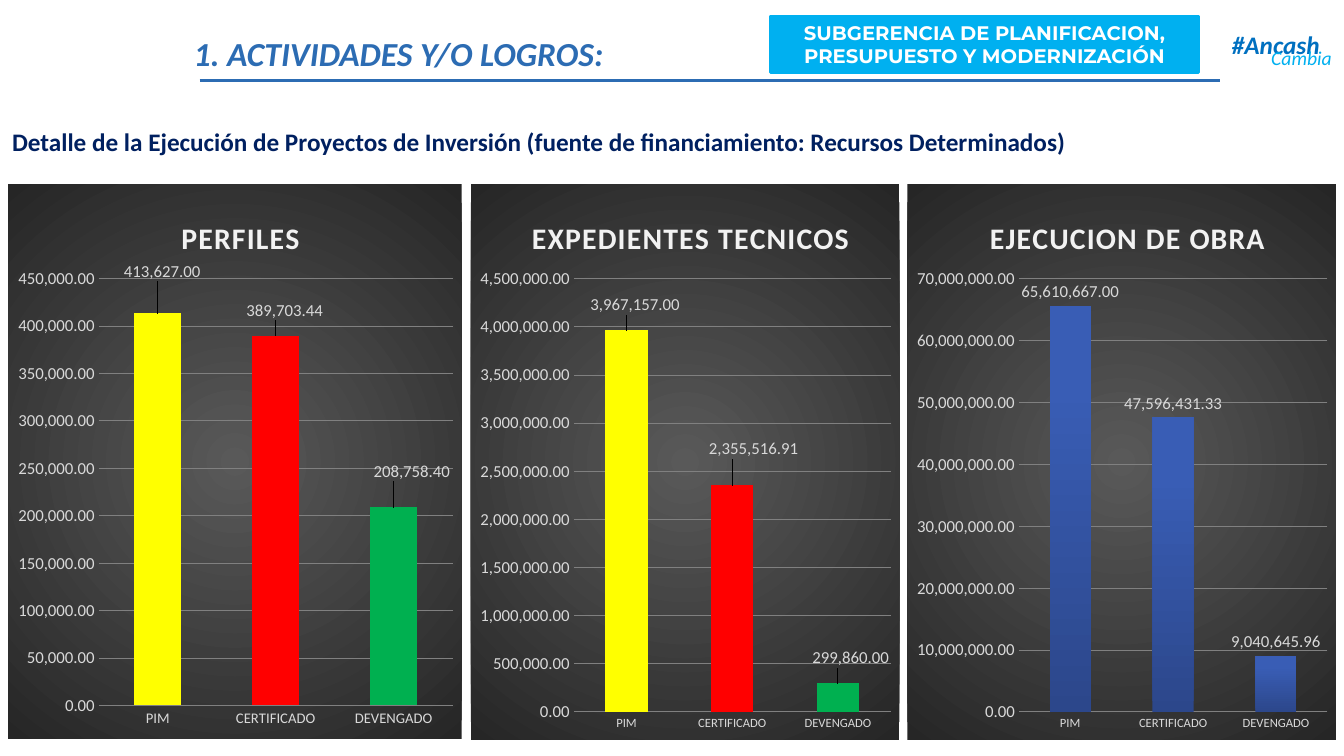
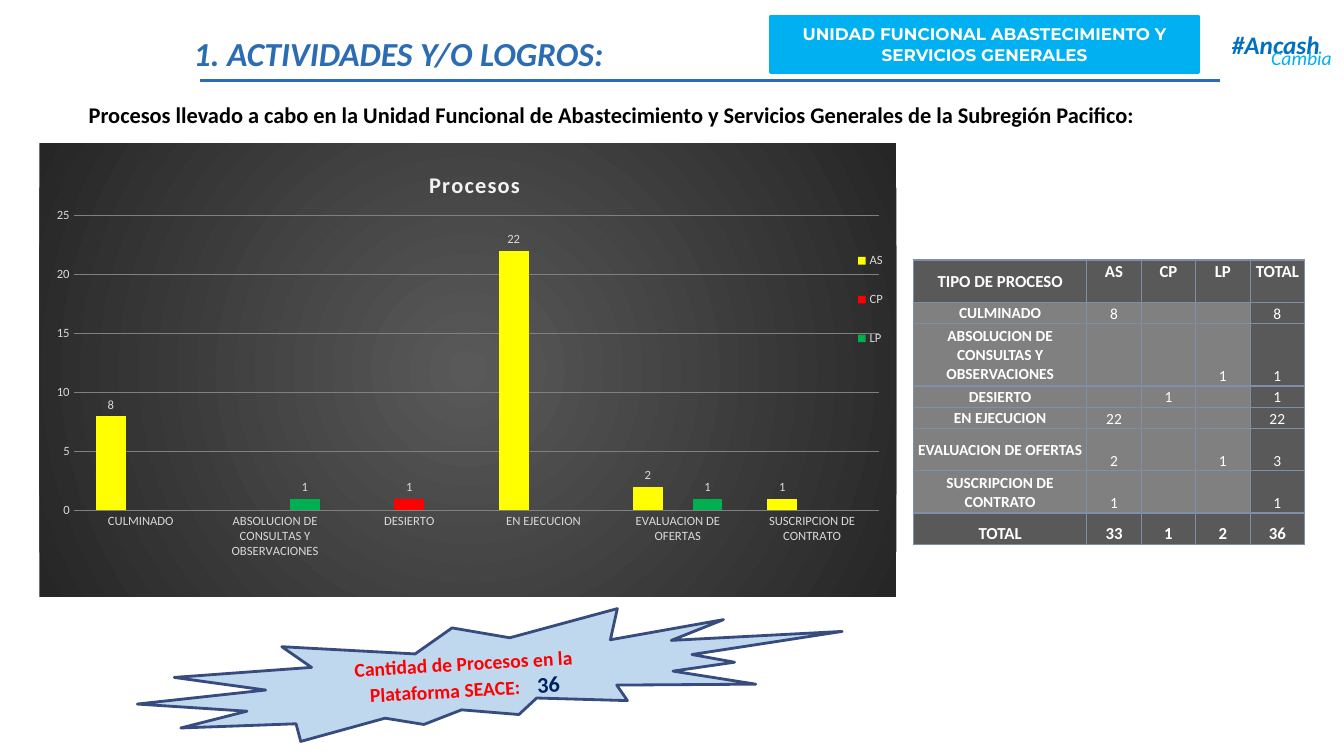
from dataclasses import dataclass

from lxml.etree import SubElement
from pptx import Presentation
from pptx.chart.data import CategoryChartData
from pptx.dml.color import RGBColor
from pptx.enum.chart import XL_CHART_TYPE as ChartType
from pptx.enum.chart import XL_LABEL_POSITION as LabelPosition
from pptx.enum.chart import XL_LEGEND_POSITION as LegendPosition
from pptx.enum.chart import XL_TICK_MARK as TickMark
from pptx.enum.shapes import MSO_CONNECTOR as Connector
from pptx.enum.shapes import MSO_SHAPE as Shape
from pptx.enum.text import MSO_ANCHOR as Anchor
from pptx.enum.text import PP_ALIGN as Align
from pptx.oxml import parse_xml
from pptx.oxml.ns import nsdecls, qn
from pptx.util import Inches, Pt


@dataclass(frozen=True)
class Theme:
    font: str = "Calibri"
    band_font: str = "Montserrat"
    blue: str = "2C6CB3"
    sky: str = "00B0F0"
    slogan: str = "0070C0"
    navy: str = "002060"
    black: str = "000000"
    white: str = "FFFFFF"
    yellow: str = "FFFF00"
    red: str = "FF0000"
    green: str = "00B050"
    bar_low: str = "2C478B"
    bar_high: str = "395DB5"
    seal: str = "C0D8ED"
    seal_line: str = "374B7F"
    dark: str = "595959"
    darkest: str = "262626"
    gray: str = "808080"
    chart_title: str = "F2F2F2"
    chart_text: str = "D9D9D9"
    border: str = "7F8FA9"
    heading_size: float = 24
    subtitle_size: float = 18
    medium_size: float = 16
    band_size: float = 14
    table_size: float = 12
    body_size: float = 11
    small_size: float = 9


THEME = Theme()
TRAFFIC = (THEME.yellow, THEME.red, THEME.green)
MONEY = "#,##0.00"
PLOT_RIGHT = 0.98


def inches(*lengths):
    return [Inches(length) for length in lengths]


def set_font(font, size, color, **values):
    values = {"name": THEME.font, "size": Pt(size), **values}
    for name, value in values.items():
        setattr(font, name, value)
    font.color.rgb = RGBColor.from_string(color)


def paint(item, color):
    item.fill.solid()
    item.fill.fore_color.rgb = RGBColor.from_string(color)


def draw_line(line, color, width):
    line.color.rgb = RGBColor.from_string(color)
    line.width = Pt(width)


def add_span(para, text, size, color, **values):
    span = para.add_run()
    span.text = text
    set_font(span.font, size, color, **values)
    return span


def set_spacing(span, hundredths):
    span._r.get_or_add_rPr().set("spc", str(hundredths))


def add_text(slide, place, text, size, color, inset=0, wrap=True, align=Align.LEFT, **values):
    frame = slide.shapes.add_textbox(*inches(*place)).text_frame
    frame.word_wrap = wrap
    if not inset:
        for side in ("left", "top", "right", "bottom"):
            setattr(frame, f"margin_{side}", 0)
    para = frame.paragraphs[0]
    para.alignment = align
    add_span(para, text, size, color, **values)


def add_block(slide, kind, place, fill, outline):
    """Add a filled shape and return it with its centred first paragraph."""
    block = slide.shapes.add_shape(kind, *inches(*place))
    block.shadow.inherit = False
    paint(block, fill)
    draw_line(block.line, outline, 2)
    block.text_frame.word_wrap = True
    block.text_frame.vertical_anchor = Anchor.MIDDLE
    para = block.text_frame.paragraphs[0]
    para.alignment = Align.CENTER
    return block, para


def add_page(deck, band_text, band_size):
    """Add a slide with the shared slogan, rule, unit band and heading."""
    slide = deck.slides.add_slide(deck.slide_layouts[6])
    add_text(slide, (12.12, 0.24, 1.08, 0.4), "#Ancash", THEME.subtitle_size, THEME.slogan,
             inset=0.1, wrap=False, bold=True, italic=True)
    add_text(slide, (12.51, 0.41, 0.82, 0.34), "Cambia", THEME.band_size, THEME.sky,
             inset=0.1, wrap=False, italic=True)
    rule = slide.shapes.add_connector(Connector.STRAIGHT, *inches(1.98, 0.8, 12.1, 0.8))
    draw_line(rule.line, THEME.blue, 2.25)
    SubElement(rule._element.spPr, qn("a:effectLst"))
    _, para = add_block(slide, Shape.RECTANGLE, (7.64, 0.16, 4.25, 0.56), THEME.sky, THEME.sky)
    add_span(para, band_text, band_size, THEME.white, name=THEME.band_font, bold=True)
    add_text(slide, (1.92, 0.33, 5, 0.4), "1. ACTIVIDADES Y/O LOGROS:", THEME.heading_size,
             THEME.blue, bold=True, italic=True)
    return slide


def set_layout(parent, index, inner=False, **fractions):
    """Place a chart part by fractions of the chart; index is its order in the parent."""
    for old in parent.findall(qn("c:layout")):
        parent.remove(old)
    layout = parse_xml(f"<c:layout {nsdecls('c')}><c:manualLayout/></c:layout>")
    manual = layout[0]
    if inner:
        SubElement(manual, qn("c:layoutTarget"), val="inner")
    modes = [] if "offset" in fractions else ["xMode", "yMode"]
    for mode in modes:
        SubElement(manual, qn(f"c:{mode}"), val="edge")
    values = fractions
    if "offset" in fractions:
        values = dict(zip("xy", fractions["offset"]))
    for name, value in values.items():
        SubElement(manual, qn(f"c:{name}"), val=f"{value:.3f}")
    parent.insert(index, layout)


def add_glow(chart):
    """Fill the chart with a dark gradient that is lighter in the centre."""
    chart._chartSpace.find(qn("c:chart")).addnext(parse_xml(
        f'<c:spPr {nsdecls("c", "a")}><a:gradFill><a:gsLst>'
        f'<a:gs pos="0"><a:srgbClr val="{THEME.dark}"/></a:gs>'
        f'<a:gs pos="100000"><a:srgbClr val="{THEME.darkest}"/></a:gs></a:gsLst>'
        '<a:path path="circle"><a:fillToRect l="50000" t="50000" r="50000" b="50000"/></a:path>'
        '</a:gradFill><a:ln><a:noFill/></a:ln></c:spPr>'))


def style_axis(axis, size):
    axis.major_tick_mark = axis.minor_tick_mark = TickMark.NONE
    axis.format.line.fill.background()
    set_font(axis.tick_labels.font, size, THEME.chart_text)


def add_columns(slide, place, title, title_size, title_at, categories, series, plot_box, scale,
                sizes, number_format="General"):
    """Add a dark column chart; plot_box is left, top, height and scale is maximum, step."""
    data = CategoryChartData(number_format=number_format)
    data.categories = categories
    for name, values in series.items():
        data.add_series(name, values)
    chart = slide.shapes.add_chart(ChartType.COLUMN_CLUSTERED, *inches(*place), data).chart
    add_glow(chart)
    set_font(chart.font, 10, THEME.black)
    chart.has_legend = False
    para = chart.chart_title.text_frame.paragraphs[0]
    set_spacing(add_span(para, title, title_size, THEME.chart_title, bold=True), 100)
    set_layout(chart.chart_title._element, 1, x=title_at[0], y=title_at[1])
    left, top, height = plot_box
    set_layout(chart._chartSpace.chart.plotArea, 0, inner=True,
               x=left, y=top, w=PLOT_RIGHT - left, h=height)

    category_size, value_size = sizes
    style_axis(chart.category_axis, category_size)
    axis = chart.value_axis
    style_axis(axis, value_size)
    axis.minimum_scale = 0
    axis.maximum_scale, axis.major_unit = scale
    draw_line(axis.major_gridlines.format.line, THEME.gray, 0.75)
    axis.tick_labels.number_format = number_format
    axis.tick_labels.number_format_is_linked = False

    plot = chart.plots[0]
    plot.gap_width = 150
    plot.overlap = 0
    plot.vary_by_categories = False
    for bars in plot.series:
        bars.invert_if_negative = False
        labels = bars.data_labels
        set_font(labels.font, value_size, THEME.chart_text)
        labels.show_value = True
        labels.position = LabelPosition.OUTSIDE_END
        labels.number_format = number_format
        labels.number_format_is_linked = False
    return chart


def shift_labels(bars, offsets, size):
    """Move each value label by fractions of the chart."""
    for index, offset in enumerate(offsets):
        label = bars.points[index].data_label
        set_font(label.font, size, THEME.chart_text)
        label.position = LabelPosition.OUTSIDE_END
        element = bars._element.xpath(f'.//c:dLbl[c:idx/@val="{index}"]')[0]
        set_layout(element, 1, offset=offset)


def fill_bars(bars, colors):
    if colors:
        for index, color in enumerate(colors):
            paint(bars.points[index].format, color)
        return
    fill = bars.format.fill
    fill.gradient()
    fill.gradient_angle = 90
    for stop, color, position in zip(fill.gradient_stops, (THEME.bar_low, THEME.bar_high), (0, 0.8)):
        stop.color.rgb = RGBColor.from_string(color)
        stop.position = position


def set_borders(cell, top_width):
    properties = cell._tc.get_or_add_tcPr()
    for index, side in enumerate("LRTB"):
        width = top_width if side == "T" else 1
        properties.insert(index, parse_xml(
            f'<a:ln{side} {nsdecls("a")} w="{Pt(width)}"><a:solidFill>'
            f'<a:srgbClr val="{THEME.border}"/></a:solidFill></a:ln{side}>'))


def add_process_table(slide, place, rows, widths, heights):
    table = slide.shapes.add_table(len(rows), len(widths), *inches(*place)).table
    for column, width in zip(table.columns, widths):
        column.width = Inches(width)
    last_row, last_column = len(rows) - 1, len(widths) - 1
    for r, (row, height) in enumerate(zip(rows, heights)):
        table.rows[r].height = Inches(height)
        edge = r in (0, last_row)
        size = THEME.table_size if edge else THEME.body_size
        for c, text in enumerate(row):
            cell = table.cell(r, c)
            for side in ("left", "top", "right"):
                setattr(cell, f"margin_{side}", Inches(0.01))
            cell.margin_bottom = 0
            cell.vertical_anchor = Anchor.BOTTOM
            if c == 0 and r < last_row:
                cell.vertical_anchor = Anchor.MIDDLE
            elif r == 0:
                cell.vertical_anchor = Anchor.TOP
            paint(cell, THEME.dark if edge or c == last_column else THEME.gray)
            set_borders(cell, 2 if r == last_row else 1)
            para = cell.text_frame.paragraphs[0]
            para.alignment = Align.CENTER
            if text:
                add_span(para, text, size, THEME.white, bold=edge or c == 0)
            else:
                SubElement(para._p, qn("a:endParaRPr"), sz=str(size * 100))


def build_investment(deck):
    slide = add_page(deck, "SUBGERENCIA DE PLANIFICACION, PRESUPUESTO Y MODERNIZACIÓN",
                     THEME.band_size)
    add_text(slide, (0.12, 1.25, 12.58, 0.3), "Detalle de la Ejecución de Proyectos de Inversión "
             "(fuente de financiamiento: Recursos Determinados)", THEME.subtitle_size, THEME.navy,
             bold=True)
    stages = ("PIM", "CERTIFICADO", "DEVENGADO")
    charts = (
        ("PERFILES", (0.08, 1.83, 4.5, 5.5), 0.37, (0.2, 0.17, 0.77), (450000, 50000), 10.5,
         (413627, 389703.44, 208758.4), TRAFFIC, ((0.01, -0.05), (0.02, -0.02), (0.04, -0.04))),
        ("EXPEDIENTES TECNICOS", (4.67, 1.83, 4.25, 5.51), 0.13, (0.24, 0.17, 0.78),
         (4500000, 500000), 9, (3967157, 2355516.91, 299860), TRAFFIC,
         ((0.02, -0.02), (0.05, -0.04), (0.03, -0.02))),
        ("EJECUCION DE OBRA", (9, 1.83, 4.25, 5.51), 0.18, (0.26, 0.17, 0.78),
         (70000000, 10000000), 9, (65610667, 47596431.33, 9040645.96), (), ()),
    )
    for title, place, title_left, plot_box, scale, size, values, colors, offsets in charts:
        chart = add_columns(slide, place, title, 21.3, (title_left, 0.05), stages,
                            {title: values}, plot_box, scale, (size, 12), MONEY)
        bars = chart.plots[0].series[0]
        fill_bars(bars, colors)
        shift_labels(bars, offsets, 12)


def build_processes(deck):
    slide = add_page(deck, "UNIDAD FUNCIONAL ABASTECIMIENTO Y SERVICIOS GENERALES",
                     THEME.table_size)
    seal, para = add_block(slide, Shape.EXPLOSION2, (1.35, 6.11, 7.02, 1.14), THEME.seal,
                           THEME.seal_line)
    seal.rotation = 356.8
    add_span(para, "Cantidad de Procesos en la Plataforma SEACE:", THEME.band_size, THEME.red,
             bold=True)
    set_spacing(add_span(para, " ", THEME.band_size, THEME.red), 900)
    add_span(para, "36", THEME.medium_size, THEME.navy, bold=True)
    add_text(slide, (0.88, 1, 12.08, 0.27), "Procesos llevado a cabo en la Unidad Funcional de "
             "Abastecimiento y Servicios Generales de la Subregión Pacifico:", THEME.medium_size,
             THEME.black, align=Align.JUSTIFY, bold=True)

    kinds = ("AS", "CP", "LP")
    counts = {
        "CULMINADO": (8, None, None),
        "ABSOLUCION DE CONSULTAS Y OBSERVACIONES": (None, None, 1),
        "DESIERTO": (None, 1, None),
        "EN EJECUCION": (22, None, None),
        "EVALUACION DE OFERTAS": (2, None, 1),
        "SUSCRIPCION DE CONTRATO": (1, None, None),
    }
    by_kind = dict(zip(kinds, zip(*counts.values())))
    chart = add_columns(slide, (0.39, 1.42, 8.5, 4.5), "Procesos", 16, (0.45, 0.05), list(counts),
                        by_kind, (0.04, 0.16, 0.65), (25, 5), (THEME.small_size,) * 2)
    for bars, color in zip(chart.plots[0].series, TRAFFIC):
        paint(bars.format, color)
    chart.has_legend = True
    chart.legend.position = LegendPosition.RIGHT
    chart.legend.include_in_layout = False
    set_font(chart.legend.font, THEME.small_size, THEME.chart_text)
    set_layout(chart.legend._element, 1, x=0.95, y=0.19, w=0.04, h=0.31)

    totals = [sum(filter(None, values)) for values in by_kind.values()]
    rows = [("TIPO DE PROCESO", *kinds, "TOTAL")]
    for name, values in counts.items():
        rows.append((name, *(str(v or "") for v in values), str(sum(filter(None, values)))))
    rows.append(("TOTAL", *map(str, totals), str(sum(totals))))
    add_process_table(slide, (9.06, 2.58, 3.88, 2.82), rows, [1.72] + [0.54] * 4,
                      (0.42, 0.21, 0.62, 0.21, 0.21, 0.42, 0.42, 0.31))


def main():
    deck = Presentation()
    deck.slide_width, deck.slide_height = inches(13.33, 7.5)
    build_investment(deck)
    build_processes(deck)
    deck.save("out.pptx")


if __name__ == "__main__":
    main()
